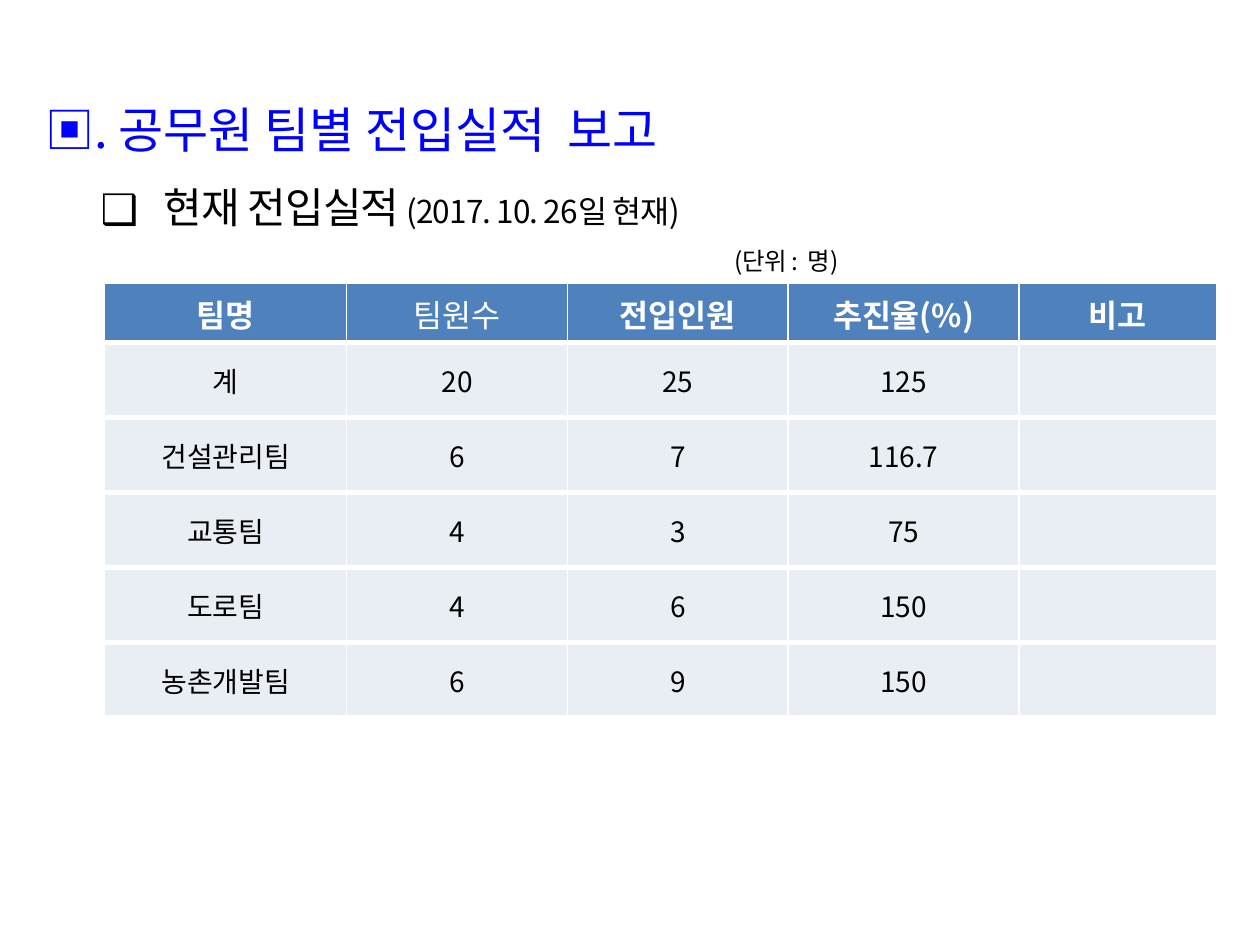
from pptx import Presentation
from pptx.dml.color import RGBColor
from pptx.enum.text import MSO_ANCHOR, PP_ALIGN
from pptx.oxml import parse_xml
from pptx.oxml.ns import nsdecls
from pptx.util import Cm, Pt

FACE = "Noto Sans CJK KR"
LINES = [
    {"runs": [("▣. 공무원 팀별 전입실적  보고", 28)], "color": "0000FF",
     "left": 1.42, "hang": -1.27},
    {"runs": [("현재 전입실적", 24), (" (2017. 10. 26일 현재)", 18)],
     "left": 2.54, "hang": -1.27, "level": 1, "mark": "❑", "track": -50},
    {"runs": [("(단위 :  명)", 14)], "left": 14.05, "level": 1, "track": -50},
]
HEADS = ["팀명", "팀원수", "전입인원", "추진율(%)", "비고"]
TEAMS = [
    ["계", "20", "25", "125", ""],
    ["건설관리팀", "6", "7", "116.7", ""],
    ["교통팀", "4", "3", "75", ""],
    ["도로팀", "4", "6", "150", ""],
    ["농촌개발팀", "6", "9", "150", ""],
]
WIDTHS = [4.88, 4.45, 4.45, 4.65, 3.99]


def tint(code):
    return RGBColor.from_string(code)


def node(tag, body="", **attrs):
    pairs = " ".join(f'{key}="{val}"' for key, val in attrs.items())
    return parse_xml(f"<a:{tag} {nsdecls('a')} {pairs}>{body}</a:{tag}>")


class Deck:
    """Holds the style and the current slide, and adds text and tables."""

    def __init__(self):
        self.show = Presentation()
        self.show.slide_width, self.show.slide_height = Cm(25.4), Cm(19.05)
        self.slide = self.show.slides.add_slide(self.show.slide_layouts[6])

    def run(self, para, text, size, color, bold=False, track=0):
        run = para.add_run()
        run.text = text
        form = {"name": FACE, "size": Pt(size), "bold": bold}
        for key, val in form.items():
            setattr(run.font, key, val)
        run.font.color.rgb = tint(color)
        props = run._r.get_or_add_rPr()
        props.find("{*}latin").addnext(node("ea", typeface=FACE))
        if track:
            props.set("spc", str(track))

    def text(self, lines, left, top, width, height):
        box = self.slide.shapes.add_textbox(Cm(left), Cm(top), Cm(width), Cm(height))
        frame = box.text_frame
        frame.word_wrap = True
        for num, line in enumerate(lines):
            para = frame.add_paragraph() if num else frame.paragraphs[0]
            form = {"level": line.get("level", 0), "line_spacing": 1.3,
                    "space_before": Pt(line["runs"][0][1] * 0.2)}
            for key, val in form.items():
                setattr(para, key, val)
            props = para._p.get_or_add_pPr()
            props.set("marL", str(Cm(line["left"])))
            props.set("indent", str(Cm(line.get("hang", 0))))
            if "mark" in line:
                props.append(node("buFont", typeface=FACE))
                props.append(node("buChar", char=line["mark"]))
            else:
                props.append(node("buNone"))
            for words, size in line["runs"]:
                self.run(para, words, size, line.get("color", "000000"),
                         track=line.get("track", 0))

    def edge(self, cell, sides):
        props = cell._tc.get_or_add_tcPr()
        fill = '<a:solidFill><a:srgbClr val="FFFFFF"/></a:solidFill>'
        for num, (side, size) in enumerate(sides.items()):
            props.insert(num, node("ln" + side, fill, w=Pt(size)))

    def cell(self, cell, text, head, bold):
        cell.fill.solid()
        cell.fill.fore_color.rgb = tint("4F81BD" if head else "E9EDF4")
        cell.vertical_anchor = MSO_ANCHOR.MIDDLE
        self.edge(cell, {"L": 1, "R": 1, "T": 1 if head else 3, "B": 3})
        para = cell.text_frame.paragraphs[0]
        para.alignment = PP_ALIGN.CENTER
        if text:
            self.run(para, text, 18 if head else 16,
                     "FFFFFF" if head else "000000", bold)

    def table(self, rows, widths, left, top, first, rest):
        high = first + rest * (len(rows) - 1)
        grid = self.slide.shapes.add_table(
            len(rows), len(widths), Cm(left), Cm(top), Cm(sum(widths)), Cm(high)).table
        grid.first_row = grid.horz_banding = False
        for col, width in zip(grid.columns, widths):
            col.width = Cm(width)
        for num, row in enumerate(rows):
            head = num == 0
            grid.rows[num].height = Cm(first if head else rest)
            for pos, text in enumerate(row):
                self.cell(grid.cell(num, pos), text, head, head and text != "팀원수")


def main():
    deck = Deck()
    deck.text(LINES, 0.51, 1.52, 24.89, 16.21)
    deck.table([HEADS] + TEAMS, WIDTHS, 2.11, 5.72, 1.19, 1.51)
    deck.show.save("out.pptx")


if __name__ == "__main__":
    main()
